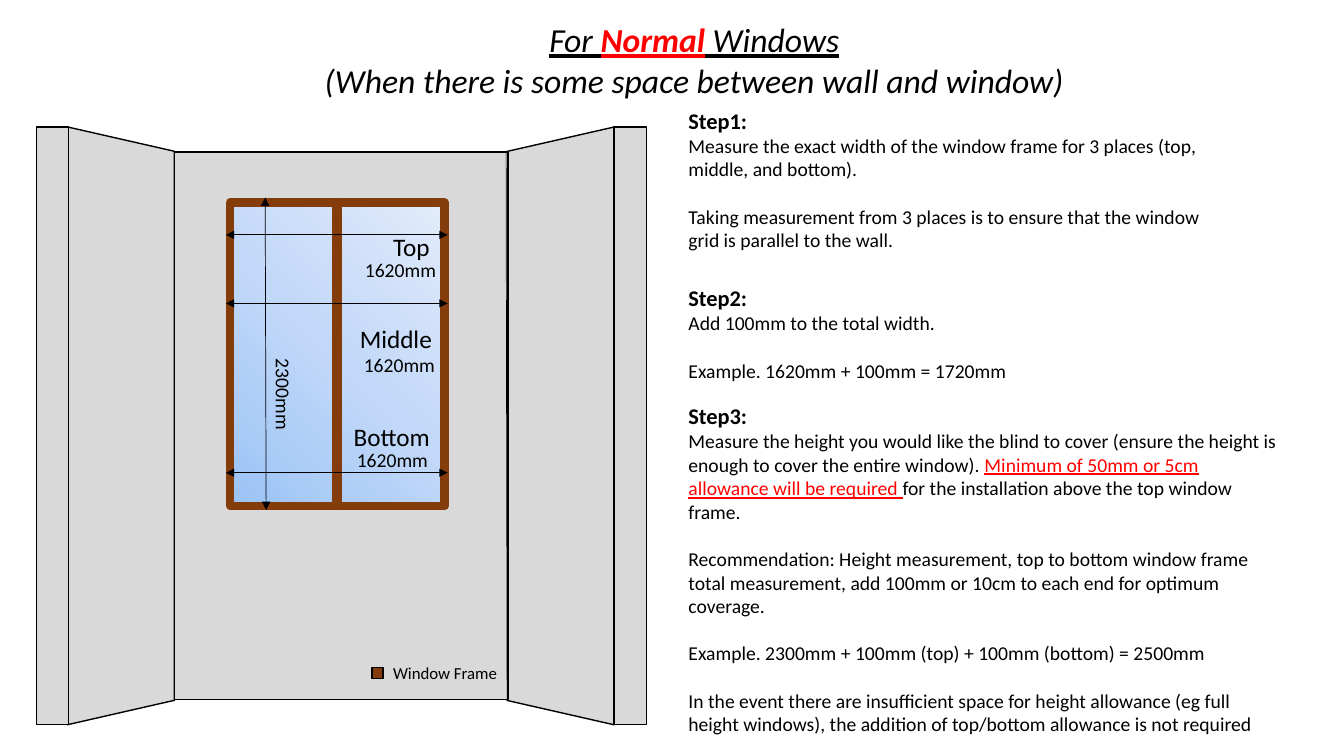
from lxml import etree
from pptx import Presentation
from pptx.dml.color import RGBColor
from pptx.enum.shapes import MSO_CONNECTOR, MSO_SHAPE
from pptx.enum.text import MSO_AUTO_SIZE, PP_ALIGN
from pptx.oxml import parse_xml
from pptx.oxml.ns import nsdecls, qn
from pptx.util import Inches, Pt

BLACK, RED, WALL, FRAME = "000000", "FF0000", "D9D9D9", "843C0B"
GLASS_STOPS = [(0, "9AC3F5"), (50, "C2D8F8"), (100, "E1EBFB")]
WALL_TOP, WALL_HEIGHT, WALL_DEPTH = 1.26, 5.93, 1.06
ARROW_LEFT, ARROW_RIGHT = 2.24, 4.44
BLANK_LINE = 17


def color(hex_value):
    return RGBColor.from_string(hex_value)


def add_block(slide, box, fill=None, line=BLACK, weight=1, preset=MSO_SHAPE.RECTANGLE):
    block = slide.shapes.add_shape(preset, *map(Inches, box))
    block.shadow.inherit = False
    if fill:
        block.fill.solid()
        block.fill.fore_color.rgb = color(fill)
    else:
        block.fill.background()
    block.line.color.rgb = color(line)
    block.line.width = Pt(weight)
    return block


def add_side_wall(slide, left, rotation):
    """Add a slanted wall: a trapezoid turned so its long side faces outwards."""
    center_x = left + WALL_DEPTH / 2
    top = WALL_TOP + (WALL_HEIGHT - WALL_DEPTH) / 2
    box = (center_x - WALL_HEIGHT / 2, top, WALL_HEIGHT, WALL_DEPTH)
    wall = add_block(slide, box, WALL, preset=MSO_SHAPE.TRAPEZOID)
    wall.adjustments[0] = 0.228
    wall.rotation = rotation


def add_glass(slide, box):
    """Add the pane with a gradient spreading from its bottom left corner."""
    glass = add_block(slide, box, line="43739E")
    stops = "".join(
        f'<a:gs pos="{position * 1000}"><a:srgbClr val="{shade}"/></a:gs>'
        for position, shade in GLASS_STOPS
    )
    gradient = parse_xml(
        f'<a:gradFill {nsdecls("a")} rotWithShape="1"><a:gsLst>{stops}</a:gsLst>'
        '<a:path path="circle"><a:fillToRect t="100000" r="100000"/></a:path></a:gradFill>'
    )
    properties = glass._element.spPr
    properties.replace(properties.find(qn("a:noFill")), gradient)


def add_line(slide, start, end, arrows=True):
    line = slide.shapes.add_connector(MSO_CONNECTOR.STRAIGHT, *map(Inches, start + end))
    line.line.color.rgb = color(BLACK)
    line.line.width = Pt(0.5)
    if arrows:
        for tag in ("a:headEnd", "a:tailEnd"):
            etree.SubElement(line.line._get_or_add_ln(), qn(tag), type="triangle")
    etree.SubElement(line._element.spPr, qn("a:effectLst"))


def add_run(paragraph, text, size, shade=BLACK, bold=False, italic=False, underline=False):
    run = paragraph.add_run()
    run.text = text
    font = run.font
    font.name, font.size = "Calibri", Pt(size)
    font.color.rgb = color(shade)
    font.bold, font.italic, font.underline = bold, italic, underline


def add_text_frame(slide, box, wrap=True):
    text_box = slide.shapes.add_textbox(*map(Inches, box))
    text_box.text_frame.word_wrap = wrap
    text_box.text_frame.auto_size = MSO_AUTO_SIZE.SHAPE_TO_FIT_TEXT
    return text_box, text_box.text_frame


def add_label(slide, box, text, size, rotation=0):
    label, frame = add_text_frame(slide, box, wrap=rotation != 0)
    label.rotation = rotation
    add_run(frame.paragraphs[0], text, size)


def add_step(slide, box, heading, paragraphs):
    """Add a heading and paragraphs, each a list of (text, is_warning) pieces."""
    _, frame = add_text_frame(slide, box)
    add_run(frame.paragraphs[0], heading, 16, bold=True)
    for index, pieces in enumerate(paragraphs):
        paragraph = frame.add_paragraph()
        paragraph.space_before = Pt(BLANK_LINE if index else 0)
        for text, is_warning in pieces:
            add_run(paragraph, text, 14, RED if is_warning else BLACK, underline=is_warning)


def add_title(slide):
    _, frame = add_text_frame(slide, (3.08, 0.14, 7.61, 0.91), wrap=False)
    heading, condition = frame.paragraphs[0], frame.add_paragraph()
    heading.alignment = condition.alignment = PP_ALIGN.CENTER
    add_run(heading, "For ", 24, italic=True, underline=True)
    add_run(heading, "Normal", 24, RED, bold=True, italic=True, underline=True)
    add_run(heading, " Windows", 24, italic=True, underline=True)
    add_run(condition, "(When there is some space between wall and window)", 24, italic=True)


def add_room(slide):
    add_side_wall(slide, 0.67, 90)
    add_side_wall(slide, 5.03, 270)
    for left in (0.36, 6.09):
        add_block(slide, (left, WALL_TOP, 0.32, WALL_HEIGHT), WALL)
    add_block(slide, (1.73, 1.51, 3.31, 5.43), WALL)
    add_line(slide, (5.02, 1.51), (5.03, 6.94), arrows=False)


def add_window(slide):
    add_glass(slide, (2.27, 2.02, 2.1, 3))
    for left in (2.28, 3.35):
        add_block(slide, (left, 2.01, 1.06, 3.01), line=FRAME, weight=6)
    add_block(slide, (3.69, 6.62, 0.11, 0.11), FRAME)
    add_label(slide, (3.8, 6.53, 1.24, 0.3), "Window Frame", 12)


def add_measurements(slide):
    widths = [
        ("Top", (3.8, 2.25, 0.57, 0.4), (3.52, 2.51), 2.33),
        ("Middle", (3.47, 3.16, 0.93, 0.4), (3.51, 3.45), 3.01),
        ("Bottom", (3.41, 4.13, 0.97, 0.4), (3.44, 4.39), 4.69),
    ]
    for place, place_box, width_corner, arrow_y in widths:
        add_label(slide, place_box, place, 18)
        add_label(slide, width_corner + (0.91, 0.34), "1620mm", 14)
        add_line(slide, (ARROW_LEFT, arrow_y), (ARROW_RIGHT, arrow_y))
    add_label(slide, (2.32, 3.78, 0.98, 0.34), "2300mm", 14, rotation=90)
    add_line(slide, (2.63, 1.96), (2.64, 5.06))


def add_steps(slide):
    add_step(slide, (6.73, 1.01, 5.56, 1.55), "Step1:", [
        [("Measure the exact width of the window frame for 3 places "
          "(top, middle, and bottom).", False)],
        [("Taking measurement from 3 places is to ensure that the window "
          "grid is parallel to the wall.", False)],
    ])
    add_step(slide, (6.73, 2.77, 5.56, 1.08), "Step2:", [
        [("Add 100mm to the total width.", False)],
        [("Example. 1620mm + 100mm = 1720mm", False)],
    ])
    add_step(slide, (6.73, 3.94, 6.07, 3.5), "Step3:", [
        [("Measure the height you would like the blind to cover (ensure the "
          "height is enough to cover the entire window). ", False),
         ("Minimum of 50mm or 5cm allowance will be required ", True),
         ("for the installation above the top window frame.", False)],
        [("Recommendation: Height measurement, top to bottom window frame total "
          "measurement, add 100mm or 10cm to each end for optimum coverage.", False)],
        [("Example. 2300mm + 100mm (top) + 100mm (bottom) = 2500mm", False)],
        [("In the event there are insufficient space for height allowance "
          "(eg full height windows), the addition of top/bottom allowance "
          "is not required", False)],
    ])


def main():
    presentation = Presentation()
    presentation.slide_width, presentation.slide_height = Inches(13.33), Inches(7.5)
    slide = presentation.slides.add_slide(presentation.slide_layouts[6])
    add_room(slide)
    add_window(slide)
    add_measurements(slide)
    add_steps(slide)
    add_title(slide)
    presentation.save("out.pptx")


if __name__ == "__main__":
    main()
